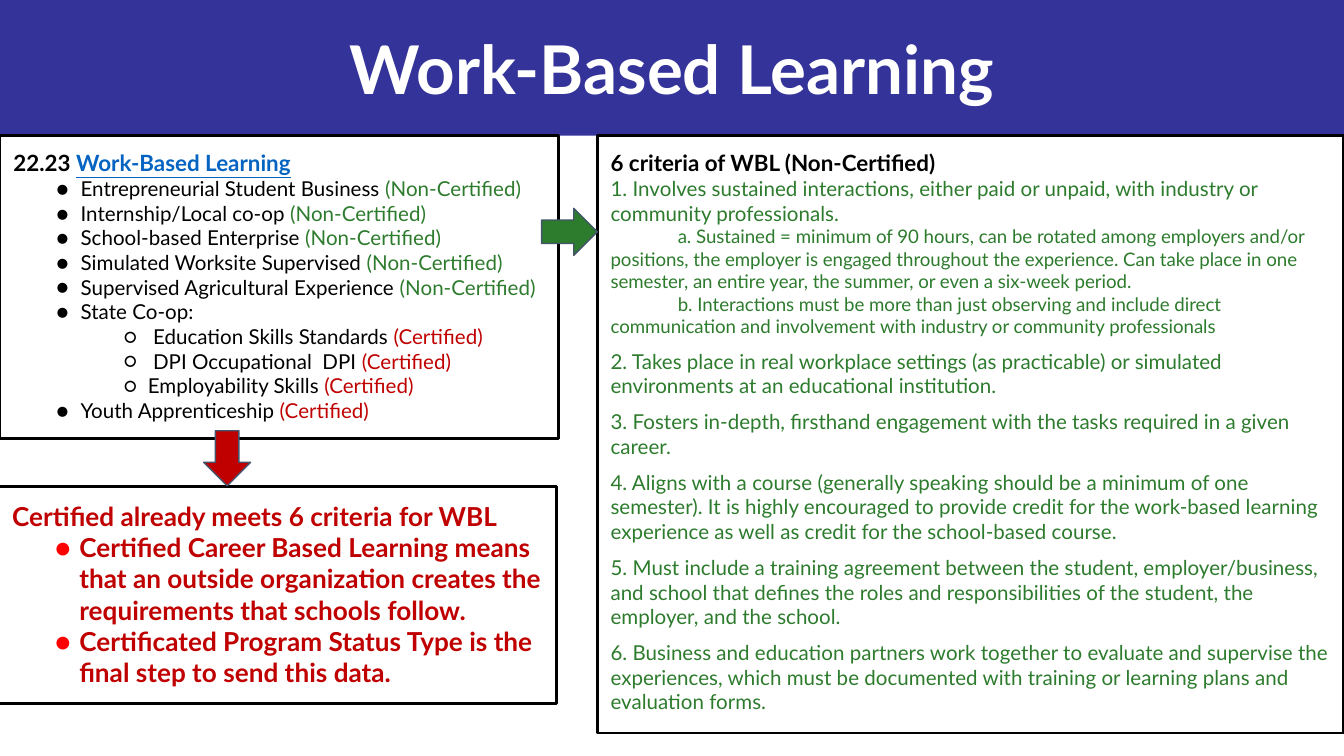
from lxml import etree
from pptx import Presentation
from pptx.dml.color import RGBColor
from pptx.enum import shapes, text
from pptx.oxml import ns
from pptx import util as u

PX = 4572
FONT = "Lato"
NAVY = RGBColor(0x33, 0x33, 0x99)
WHITE = RGBColor(0xFF, 0xFF, 0xFF)
BLACK = RGBColor(0, 0, 0)
LINK = RGBColor(0x05, 0x63, 0xC1)
GREEN = RGBColor(0x2D, 0x7B, 0x2D)
RED = RGBColor(0xC0, 0, 0)
BRIGHT_RED = RGBColor(0xFF, 0, 0)
SLATE = RGBColor(0x44, 0x54, 0x6A)

NON_CERTIFIED = ("(Non-Certified)", GREEN)
CERTIFIED = ("(Certified)", RED)
PROGRAMS = [
    (0, "Entrepreneurial Student Business ", NON_CERTIFIED),
    (0, "Internship/Local co-op ", NON_CERTIFIED),
    (0, "School-based Enterprise ", NON_CERTIFIED),
    (0, "Simulated Worksite Supervised ", NON_CERTIFIED),
    (0, "Supervised Agricultural Experience ", NON_CERTIFIED),
    (0, "State Co-op:", None),
    (1, " Education Skills Standards ", CERTIFIED),
    (1, " DPI Occupational  DPI ", CERTIFIED),
    (1, "Employability Skills ", CERTIFIED),
    (0, "Youth Apprenticeship ", CERTIFIED),
]
CERTIFIED_NOTES = [
    "Certified Career Based Learning means that an outside organization creates "
    "the requirements that schools follow.",
    "Certificated Program Status Type is the final step to send this data.",
]
FIRST_CRITERION = ("1. Involves sustained interactions, either paid or unpaid, "
                   "with industry or community professionals.")
CLARIFICATIONS = [
    "a. Sustained = minimum of 90 hours, can be rotated among employers and/or "
    "positions, the employer is engaged throughout the experience. Can take place "
    "in one semester, an entire year, the summer, or even a six-week period.",
    "b. Interactions must be more than just observing and include direct "
    "communication and involvement with industry or community professionals",
]
OTHER_CRITERIA = [
    "2. Takes place in real workplace settings (as practicable) or simulated "
    "environments at an educational institution.",
    "3. Fosters in-depth, firsthand engagement with the tasks required in a given career.",
    "4. Aligns with a course (generally speaking should be a minimum of one "
    "semester). It is highly encouraged to provide credit for the work-based "
    "learning experience as well as credit for the school-based course.",
    "5. Must include a training agreement between the student, employer/business, "
    "and school that defines the roles and responsibilities of the student, the "
    "employer, and the school.",
    "6. Business and education partners work together to evaluate and supervise the "
    "experiences, which must be documented with training or learning plans and "
    "evaluation forms.",
]


class SlideBuilder:
    """Holds the slide and draws each kind of element in one style."""

    def __init__(self, slide):
        self.slide = slide

    def place(self, shape, box):
        shape.left, shape.top, shape.width, shape.height = (n * PX for n in box)

    def shape(self, kind, box, fill=None, line=None, weight=0.75):
        shape = self.slide.shapes.add_shape(kind, *(n * PX for n in box))
        shape.shadow.inherit = False
        self.paint(shape, fill, line, weight)
        return shape

    def paint(self, shape, fill, line, weight):
        if fill is None:
            shape.fill.background()
        else:
            shape.fill.solid()
            shape.fill.fore_color.rgb = fill
        if line is None:
            shape.line.fill.background()
        else:
            shape.line.color.rgb = line
            shape.line.width = u.Pt(weight)

    def title(self, words, box):
        title = self.slide.shapes.title
        self.place(title, box)
        frame = title.text_frame
        frame.vertical_anchor = text.MSO_ANCHOR.MIDDLE
        frame.auto_size = text.MSO_AUTO_SIZE.NONE
        self.paragraph(frame, [(words, WHITE)], 36, bold=True,
                       align=text.PP_ALIGN.CENTER)

    def banner(self, box):
        banner = self.shape(shapes.MSO_SHAPE.RECTANGLE, box, NAVY)
        self.slide.shapes.title._element.addprevious(banner._element)

    def panel(self, box, placeholder=None):
        if placeholder is None:
            panel = self.shape(shapes.MSO_SHAPE.RECTANGLE, box, None, BLACK, 1.5)
        else:
            panel = self.slide.placeholders[placeholder]
            self.place(panel, box)
            self.paint(panel, None, BLACK, 1.5)
        frame = panel.text_frame
        frame.word_wrap = True
        frame.auto_size = text.MSO_AUTO_SIZE.NONE
        frame.vertical_anchor = text.MSO_ANCHOR.TOP
        frame.margin_left = frame.margin_right = 20 * PX
        frame.margin_top = frame.margin_bottom = 20 * PX
        return frame

    def paragraph(self, frame, runs, size, bold=False, level=0, margin=0, indent=0,
                  bullet=None, bullet_color=BLACK, before=0,
                  align=text.PP_ALIGN.LEFT):
        first = frame.paragraphs[0]
        para = frame.add_paragraph() if first.runs else first
        props = para._p.get_or_add_pPr()
        props.set("marL", str(margin * PX))
        props.set("indent", str(indent * PX))
        if bullet:
            color = etree.SubElement(props, ns.qn("a:buClr"))
            etree.SubElement(color, ns.qn("a:srgbClr"), val=str(bullet_color))
            etree.SubElement(props, ns.qn("a:buFont"), typeface=FONT)
            etree.SubElement(props, ns.qn("a:buChar"), char=bullet)
        else:
            etree.SubElement(props, ns.qn("a:buNone"))
        para.level = level
        para.alignment = align
        para.space_before = u.Pt(before)
        para.space_after = u.Pt(0)
        for words, color in runs:
            run = para.add_run()
            run.text = words
            run.font.name = FONT
            run.font.size = u.Pt(size)
            run.font.bold = bold
            run.font.color.rgb = color
            if color == LINK:
                run.font.underline = True

    def bullet(self, frame, runs, size, level=0, bold=False, color=BLACK):
        self.paragraph(frame, runs, size, bold, level, 100 * (level + 1), -36,
                       "●○"[level], color)

    def arrow(self, box, fill, rotation=0):
        arrow = self.shape(shapes.MSO_SHAPE.RIGHT_ARROW, box, fill, SLATE)
        arrow.rotation = rotation


def main():
    deck = Presentation()
    deck.slide_width, deck.slide_height = 2000 * PX, 1125 * PX
    two_content = deck.slide_layouts[3]
    page = SlideBuilder(deck.slides.add_slide(two_content))

    page.title("Work-Based Learning", (0, 0, 2000, 202))
    page.banner((-2, 0, 2002, 202))

    programs = page.panel((0, 202, 831, 451), placeholder=1)
    page.paragraph(programs, [("22.23 ", BLACK), ("Work-Based Learning", LINK)],
                   12, bold=True)
    for level, name, status in PROGRAMS:
        runs = [(name, BLACK)] + ([status] if status else [])
        page.bullet(programs, runs, 11, level)

    certified = page.panel((-2, 724, 830, 323), placeholder=2)
    page.paragraph(certified, [("Certified already meets 6 criteria for WBL", RED)],
                   14, bold=True)
    for note in CERTIFIED_NOTES:
        page.bullet(certified, [(note, RED)], 14, bold=True, color=BRIGHT_RED)

    criteria = page.panel((889, 202, 1111, 889))
    page.paragraph(criteria, [("6 criteria of WBL (Non-Certified)", BLACK)], 12, bold=True)
    page.paragraph(criteria, [(FIRST_CRITERION, GREEN)], 11)
    for clarification in CLARIFICATIONS:
        page.paragraph(criteria, [(clarification, GREEN)], 10, indent=100)
    for criterion in OTHER_CRITERIA:
        page.paragraph(criteria, [(criterion, GREEN)], 11, before=6)

    page.arrow((806, 310, 83, 70), GREEN)
    page.arrow((297, 647, 82, 70), RED, rotation=90)
    deck.save("out.pptx")


if __name__ == "__main__":
    main()
